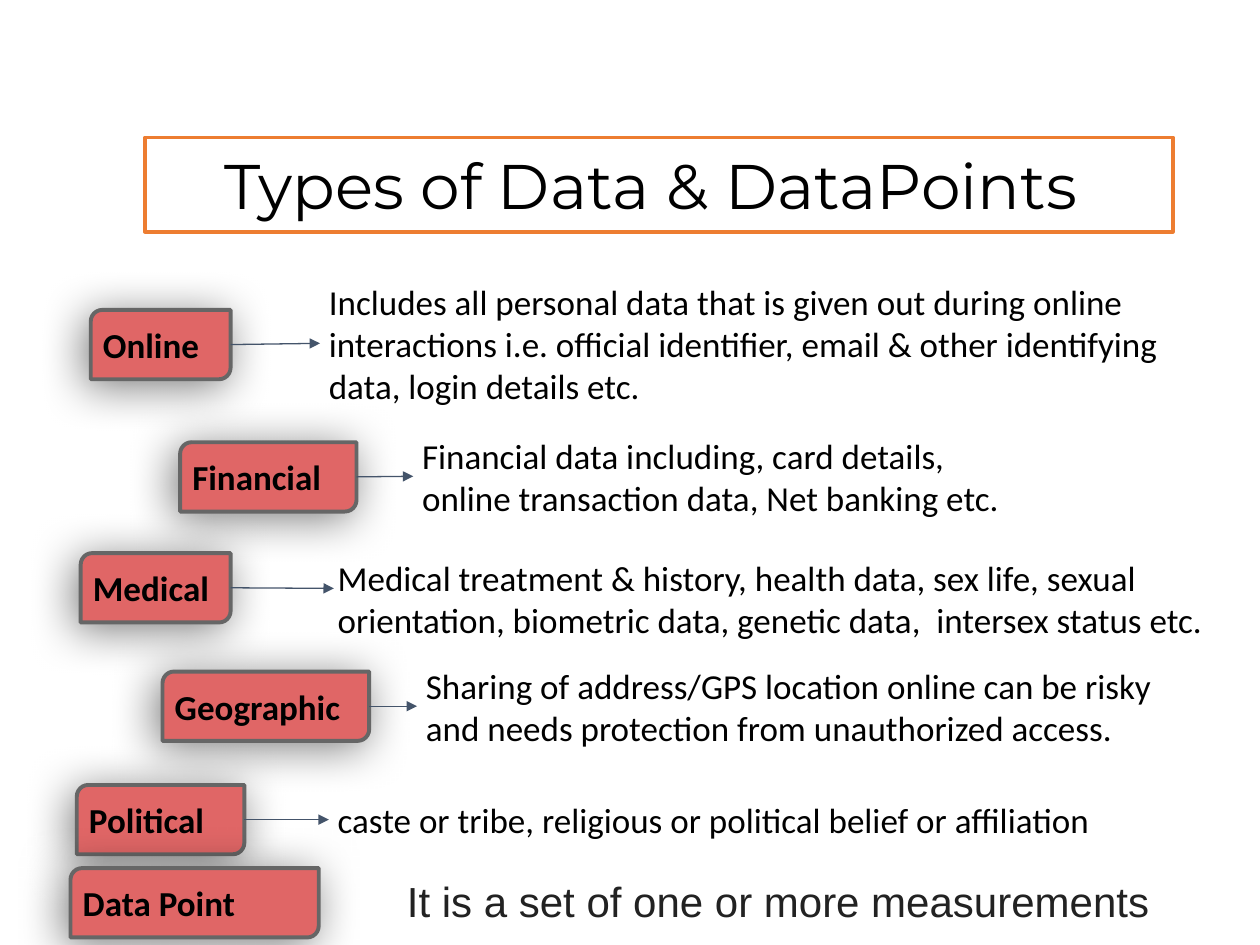
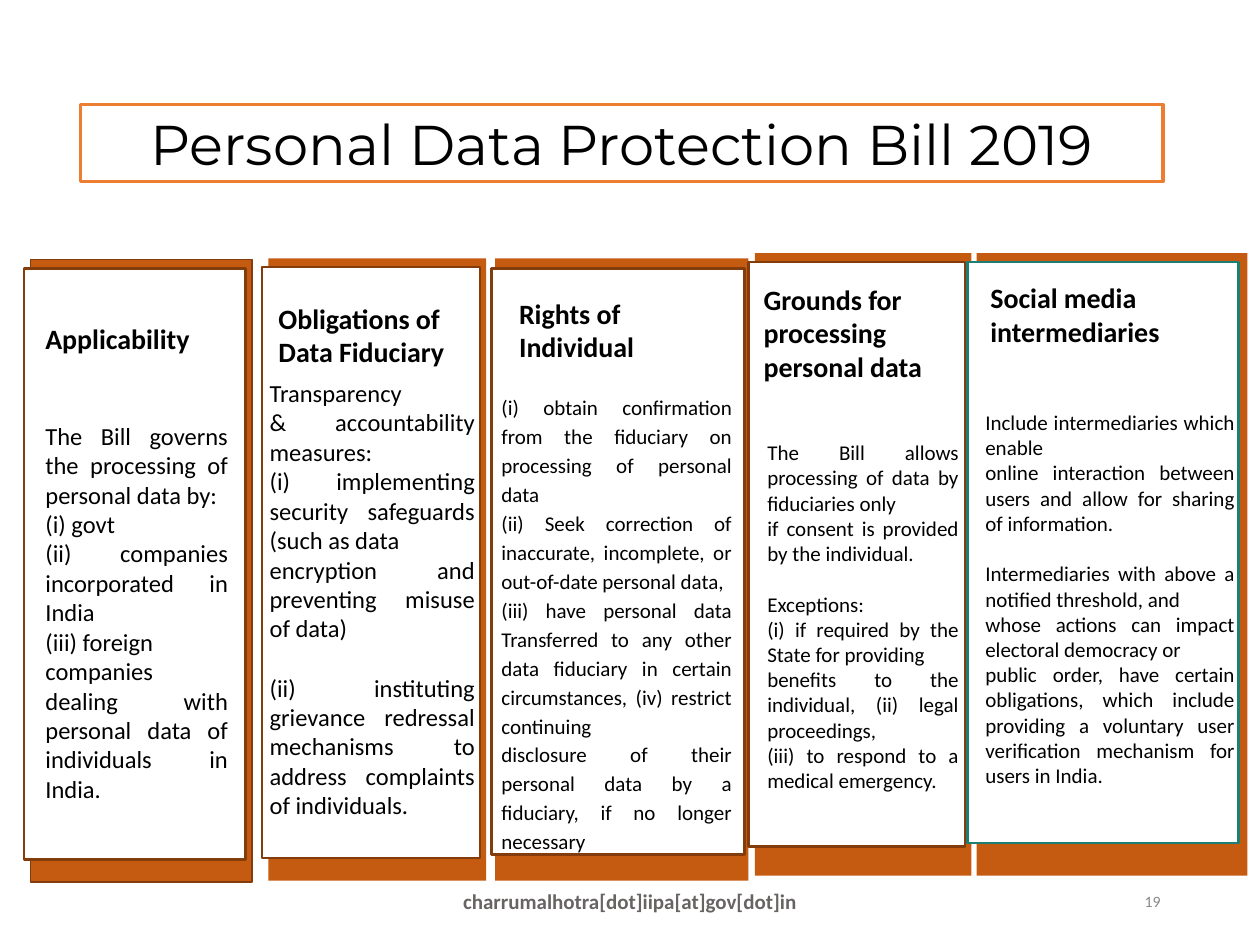
from collections import namedtuple
from dataclasses import dataclass

from lxml import etree
from pptx import Presentation
from pptx import util as u
from pptx.dml import color
from pptx.enum import shapes, text
from pptx.oxml import ns

PX = 9144
TITLE_ONLY = 5


@dataclass(frozen=True)
class Theme:
    body_font: str = "Calibri"
    title_font: str = "Montserrat"
    note_font: str = "Arial"
    ink: str = "000000"
    white: str = "FFFFFF"
    orange: str = "ED7D31"
    badge: str = "E06666"
    badge_edge: str = "666666"
    arrow: str = "44546A"
    panel: str = "C55A11"
    panel_edge: str = "833C0B"
    teal: str = "1D7E74"
    note: str = "222222"
    contact: str = "696464"
    number: str = "888888"
    label_size: int = 20
    note_size: int = 24
    heading_size: int = 16
    contact_size: int = 12
    number_size: int = 9


THEME = Theme()
ALIGN = text.PP_ALIGN
MIDDLE = text.MSO_ANCHOR.MIDDLE
TOP = text.MSO_ANCHOR.TOP


class Box(namedtuple("Box", "left top width height")):
    def inside(self, dx, dy, width, height):
        return Box(self.left + dx, self.top + dy, width, height)

    def emu(self):
        return [side * PX for side in self]


Category = namedtuple("Category", "name badge description words arrow_end")
Column = namedtuple(
    "Column", "heading panel card heading_box body_box size spacing edge panel_edge paragraphs"
)
Gap = namedtuple("Gap", "words before")

SLIDE = Box(0, 0, 1000, 750)

CATEGORIES = [
    Category("Online", Box(72, 246, 111, 55), Box(254, 220, 677, 105),
             "Includes all personal data that is given out during online interactions i.e. "
             "official identifier, email & other identifying data, login details etc.", None),
    Category("Financial", Box(143, 351, 140, 55), Box(328, 343, 474, 70),
             "Financial data including, card details, online transaction data, "
             "Net banking etc.", None),
    Category("Medical", Box(64, 439, 119, 55), Box(261, 434, 712, 82),
             "Medical treatment & history, health data, sex life, sexual orientation, "
             "biometric data, genetic data,  intersex status etc.", (265, 467)),
    Category("Geographic", Box(129, 533, 164, 55), Box(331, 529, 622, 63),
             "Sharing of address/GPS location online can be risky and needs protection "
             "from unauthorized access.", None),
    Category("Political", Box(61, 623, 133, 55), Box(261, 625, 630, 51),
             "caste or tribe, religious or political belief or affiliation", None),
]

COLUMNS = [
    Column("Applicability", Box(24, 206, 176, 494), (-5, 7, 176, 469),
           (5, 42, 157, 45), (5, 121, 159, 340), 14, 1.0, THEME.panel_edge, THEME.panel_edge,
           ["The Bill governs the processing of personal data by:",
            "(i) govt",
            "(ii) companies incorporated in India",
            "(iii) foreign",
            "companies dealing with personal data of individuals in India."]),
    Column("Obligations of Data Fiduciary", Box(213, 205, 173, 494), (-5, 7, 173, 469),
           (1, 27, 169, 75), (-6, 88, 177, 359), 14, 1.0, THEME.panel_edge, None,
           ["Transparency",
            "& accountability measures:",
            "(i) implementing security safeguards (such as data",
            "encryption and preventing misuse of data)",
            Gap("(ii) instituting grievance redressal mechanisms to address complaints "
                "of individuals.", 17)]),
    Column("Rights of Individual", Box(393, 205, 201, 494), (-3, 8, 201, 465),
           (12, 23, 173, 69), (-2, 98, 197, 381), 12, 1.15, THEME.panel_edge, None,
           ["(i) obtain confirmation from the fiduciary on processing of personal data",
            "(ii) Seek correction of inaccurate, incomplete, or out-of-date personal data,",
            "(iii) have personal data Transferred to any other data fiduciary in certain "
            "circumstances, (iv) restrict continuing",
            "disclosure of their personal data by a fiduciary, if no longer necessary"]),
    Column("Grounds for processing personal data", Box(599, 201, 172, 494), (-5, 7, 172, 464),
           (0, 16, 172, 90), (3, 141, 166, 316), 12, 1.0, THEME.panel_edge, None,
           ["The Bill allows processing of data by fiduciaries only",
            "if consent is provided by the individual.",
            Gap("Exceptions:", 14.5),
            "(i) if required by the State for providing",
            "benefits to the individual, (ii) legal proceedings,",
            "(iii) to respond to a medical emergency."]),
    Column("Social media intermediaries", Box(775, 201, 215, 494), (-7, 7, 215, 461),
           (4, 15, 209, 72), (0, 117, 212, 388), 12, 1.0, THEME.teal, None,
           ["Include intermediaries which enable",
            "online interaction between users and allow for sharing of information.",
            Gap("Intermediaries with above a notified threshold, and", 14.5),
            "whose actions can impact electoral democracy or",
            "public order, have certain obligations, which include providing a voluntary "
            "user verification mechanism for users in India."]),
]


def apply(target, formats):
    for name, value in formats.items():
        setattr(target, name, value)


def rgb(value):
    return color.RGBColor.from_string(value)


def outline(line, colour, width):
    line.color.rgb = rgb(colour)
    line.width = u.Pt(width)


def write(shape, paragraphs, size, colour=THEME.ink, font=THEME.body_font, bold=False,
          align=ALIGN.LEFT, anchor=TOP, inset=(7, 7), spacing=1.0):
    frame = shape.text_frame
    across, down = (side * PX for side in inset)
    apply(frame, {"word_wrap": True, "auto_size": text.MSO_AUTO_SIZE.NONE,
                  "vertical_anchor": anchor, "margin_left": across, "margin_right": across,
                  "margin_top": down, "margin_bottom": down})
    for index, item in enumerate(paragraphs):
        words, before = item if isinstance(item, Gap) else (item, 0)
        para = frame.add_paragraph() if index else frame.paragraphs[0]
        apply(para, {"alignment": align, "line_spacing": spacing})
        if before:
            para.space_before = u.Pt(before)
        span = para.add_run()
        span.text = words
        apply(span.font, {"size": u.Pt(size), "name": font, "bold": bold})
        span.font.color.rgb = rgb(colour)


def add_text(parent, box, paragraphs, size, **formats):
    shape = parent.add_textbox(*box.emu())
    write(shape, paragraphs, size, **formats)
    return shape


def add_block(parent, kind, box, fill, edge=None, width=0.75):
    shape = parent.add_shape(kind, *box.emu())
    shape.shadow.inherit = False
    shape.fill.solid()
    shape.fill.fore_color.rgb = rgb(fill)
    if edge:
        outline(shape.line, edge, width)
    else:
        shape.line.fill.background()
    return shape


def add_title(page, box, words, size):
    title = page.shapes.title
    apply(title, dict(zip(("left", "top", "width", "height"), box.emu())))
    title.fill.solid()
    title.fill.fore_color.rgb = rgb(THEME.white)
    outline(title.line, THEME.orange, 2)
    write(title, [words], size, font=THEME.title_font, align=ALIGN.CENTER, anchor=MIDDLE)


def soften(shape):
    effects = shape._element.spPr.find(ns.qn("a:effectLst"))
    shadow = etree.SubElement(effects, ns.qn("a:outerShdw"), blurRad=str(u.Pt(25.9)),
                              dist=str(u.Pt(4.5)), dir=str(133 * 60000),
                              algn="bl", rotWithShape="0")
    tint = etree.SubElement(shadow, ns.qn("a:srgbClr"), val=THEME.ink)
    etree.SubElement(tint, ns.qn("a:alpha"), val="49000")


def add_badge(page, box, name):
    badge = add_block(page.shapes, shapes.MSO_SHAPE.ROUND_2_DIAG_RECTANGLE, box,
                      THEME.badge, THEME.badge_edge, 2.25)
    soften(badge)
    write(badge, [name], THEME.label_size, bold=True, anchor=MIDDLE)
    return badge


def add_arrow(page, badge, description, end):
    end_x, end_y = (side * PX for side in end or (0, 0))
    arrow = page.shapes.add_connector(shapes.MSO_CONNECTOR.STRAIGHT, 0, 0, end_x, end_y)
    arrow.begin_connect(badge, 3)
    if not end:
        arrow.end_connect(description, 1)
    outline(arrow.line, THEME.arrow, 0.75)
    etree.SubElement(arrow.line._get_or_add_ln(), ns.qn("a:tailEnd"), type="triangle")
    etree.SubElement(arrow._element.spPr, ns.qn("a:effectLst"))


def add_category(page, category):
    badge = add_badge(page, category.badge, category.name)
    description = add_text(page.shapes, category.description, [category.words],
                           THEME.label_size, anchor=MIDDLE)
    add_arrow(page, badge, description, category.arrow_end)


def add_column(page, column):
    parent = page.shapes.add_group_shape().shapes
    panel = column.panel
    rectangle = shapes.MSO_SHAPE.RECTANGLE
    add_block(parent, rectangle, panel, THEME.panel, column.panel_edge)
    add_block(parent, rectangle, panel.inside(*column.card), THEME.white, column.edge, 1.5)
    add_text(parent, panel.inside(*column.body_box), column.paragraphs, column.size,
             align=ALIGN.JUSTIFY, spacing=column.spacing)
    add_text(parent, panel.inside(*column.heading_box), [column.heading],
             THEME.heading_size, bold=True)


def add_footer(page, box):
    formats = {"anchor": MIDDLE, "inset": (10, 5)}
    add_text(page.shapes, box.inside(0, 0, 338, box.height),
             ["charrumalhotra[dot]iipa[at]gov[dot]in"], THEME.contact_size,
             colour=THEME.contact, bold=True, align=ALIGN.CENTER, **formats)
    add_text(page.shapes, box.inside(box.width - 225, 0, 225, box.height), ["19"],
             THEME.number_size, colour=THEME.number, align=ALIGN.RIGHT, **formats)


def data_types_slide(deck):
    page = deck.slides.add_slide(deck.slide_layouts[TITLE_ONLY])
    add_title(page, Box(115, 109, 816, 75), "Types of Data & DataPoints ", 36)
    for category in CATEGORIES:
        add_category(page, category)
    add_badge(page, Box(56, 689, 197, 55), "Data Point")
    add_text(page.shapes, Box(265, 695, 657, 40), ["It is a set of one or more measurements"],
             THEME.note_size, colour=THEME.note, font=THEME.note_font,
             align=ALIGN.RIGHT, anchor=MIDDLE, inset=(10, 5))


def bill_slide(deck):
    page = deck.slides.add_slide(deck.slide_layouts[TITLE_ONLY])
    add_title(page, Box(64, 83, 859, 61), "Personal Data Protection Bill 2019", 32)
    add_footer(page, Box(331, 695, 600, 40))
    for column in COLUMNS:
        add_column(page, column)


def main():
    deck = Presentation()
    deck.slide_width = SLIDE.width * PX
    deck.slide_height = SLIDE.height * PX
    data_types_slide(deck)
    bill_slide(deck)
    deck.save("out.pptx")


if __name__ == "__main__":
    main()
